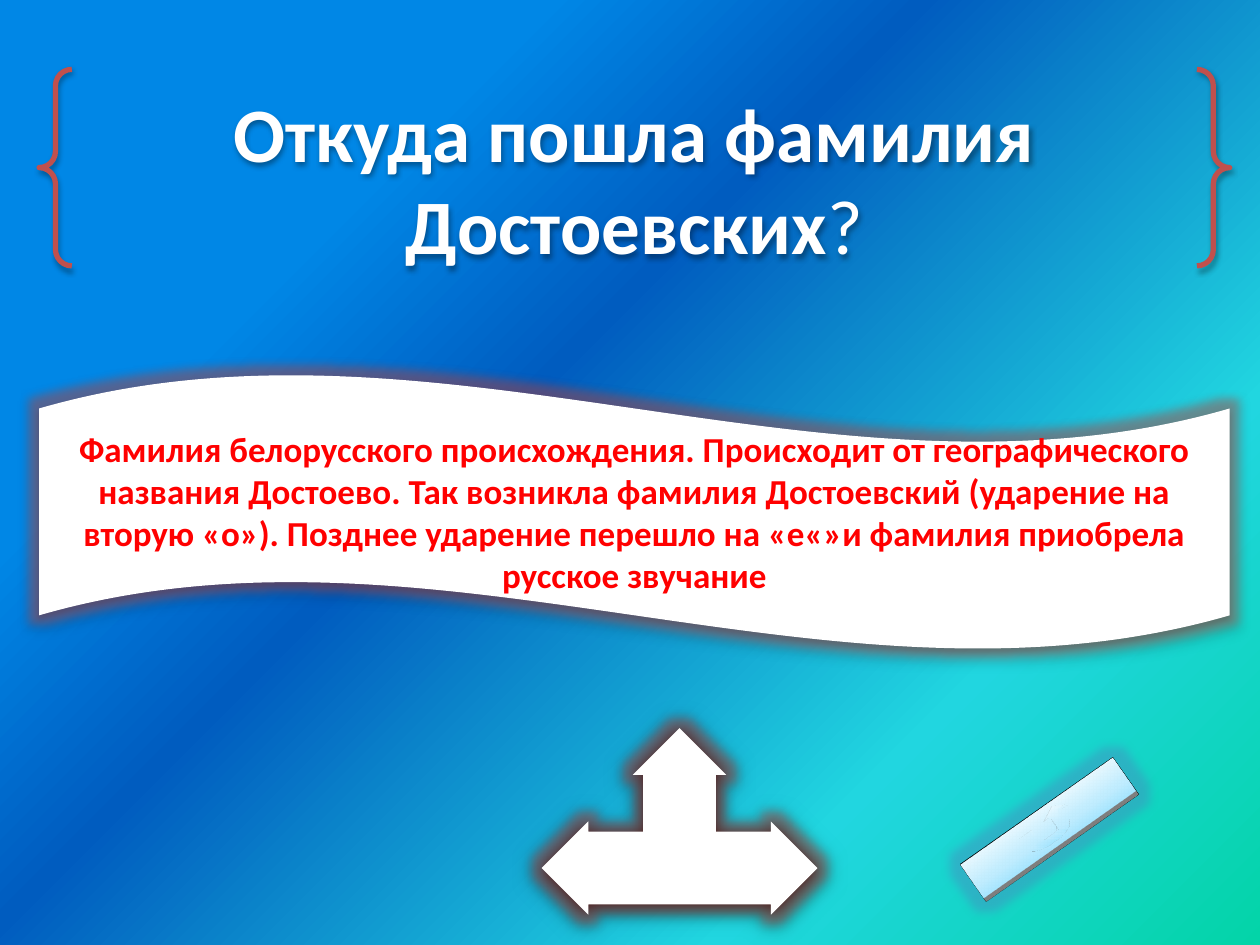
"""Builds a slide about the origin of the Dostoevsky surname."""
from lxml import etree
from pptx import Presentation
from pptx.dml.color import RGBColor
from pptx.enum.shapes import MSO_SHAPE
from pptx.enum.text import MSO_ANCHOR, MSO_AUTO_SIZE, PP_ALIGN
from pptx.oxml.ns import qn
from pptx.util import Cm, Pt

BRACES = MSO_SHAPE.DOUBLE_BRACE
WAVE = MSO_SHAPE.WAVE
ARROW = MSO_SHAPE.LEFT_RIGHT_UP_ARROW
BUTTON = MSO_SHAPE.ACTION_BUTTON_RETURN
MIDDLE = MSO_ANCHOR.MIDDLE
CENTER = PP_ALIGN.CENTER
NO_FIT = MSO_AUTO_SIZE.NONE

WHITE = RGBColor(0xFF, 0xFF, 0xFF)
BLACK = RGBColor(0x00, 0x00, 0x00)
RED = RGBColor(0xFF, 0x00, 0x00)
BRICK = RGBColor(0xC0, 0x50, 0x4D)
GLOW_RED = RGBColor(0xCC, 0x48, 0x42)
GLOW_BLUE = RGBColor(0x4F, 0x81, 0xBD)
SKY = [(0, RGBColor(0xA7, 0xE6, 0xFF), 100),
       (35, RGBColor(0xC1, 0xED, 0xFF), 100),
       (100, RGBColor(0xE7, 0xF8, 0xFF), 100)]
SEA = [(0, RGBColor(0x03, 0xD4, 0xA8), 100),
       (25, RGBColor(0x21, 0xD6, 0xE0), 100),
       (58, RGBColor(0x00, 0x5C, 0xBF), 59),
       (75, RGBColor(0x00, 0x87, 0xE6), 100)]


def add(parent, tag, **attrs):
    return etree.SubElement(parent, qn(tag), {k: str(v) for k, v in attrs.items()})


def add_color(parent, color, alpha):
    clr = add(parent, "a:srgbClr", val=color)
    if alpha < 100:
        add(clr, "a:alpha", val=alpha * 1000)


class Deck:
    """Holds the font and the current slide."""

    font = "Calibri"

    def __init__(self, prs):
        self.s = prs.slides.add_slide(prs.slide_layouts[5])

    def stops(self, grad, stops):
        for child in list(grad):
            grad.remove(child)
        gs_lst = add(grad, "a:gsLst")
        for pos, color, alpha in stops:
            add_color(add(gs_lst, "a:gs", pos=pos * 1000), color, alpha)

    def background(self, stops):
        self.s.background.fill.gradient()
        grad = self.s.element.find(".//" + qn("a:gradFill"))
        self.stops(grad, stops)
        path = add(grad, "a:path", path="circle")
        add(path, "a:fillToRect", l=100000, t=100000)
        add(grad, "a:tileRect", r=-100000, b=-100000)

    def text(self, sp, size, color, *runs):
        tf = sp.text_frame
        tf.word_wrap = True
        tf.auto_size = NO_FIT
        tf.vertical_anchor = MIDDLE
        p = tf.paragraphs[0]
        p.alignment = CENTER
        for text, bold in runs:
            r = p.add_run()
            r.text = text
            r.font.name = self.font
            r.font.size = Pt(size)
            r.font.bold = bold
            r.font.color.rgb = color

    def effects(self, sp, shadow, glow=None):
        sp.shadow.inherit = False
        lst = sp.element.spPr.find(qn("a:effectLst"))
        if glow:
            add_color(add(lst, "a:glow", rad=Pt(11)), glow, 40)
        alpha, blur, dist, angle = shadow
        shdw = add(lst, "a:outerShdw", blurRad=Pt(blur), dist=Pt(dist),
                   dir=angle * 60000, rotWithShape=0)
        add_color(shdw, BLACK, alpha)

    def title(self, box, shadow, *runs):
        sp = self.s.shapes.title
        sp.left, sp.top, sp.width, sp.height = map(Cm, box)
        self.text(sp, 44, WHITE, *runs)
        self.effects(sp, shadow)

    def shape(self, kind, box, fill=None, line=None, weight=0):
        sp = self.s.shapes.add_shape(kind, *map(Cm, box))
        if fill:
            sp.fill.solid()
            sp.fill.fore_color.rgb = fill
        else:
            sp.fill.background()
        if line:
            sp.line.color.rgb = line
            sp.line.width = Pt(weight)
        else:
            sp.line.fill.background()
        return sp

    def gradient(self, sp, stops, angle):
        sp.fill.gradient()
        grad = sp.element.spPr.find(qn("a:gradFill"))
        self.stops(grad, stops)
        add(grad, "a:lin", ang=angle * 60000, scaled=0)

    def tilt(self, sp, lat, rev, depth):
        scene = add(sp.element.spPr, "a:scene3d")
        camera = add(scene, "a:camera", prst="orthographicFront")
        add(camera, "a:rot", lat=lat * 60000, lon=0, rev=rev * 60000)
        add(scene, "a:lightRig", rig="threePt", dir="t")
        add(sp.element.spPr, "a:sp3d", extrusionH=Pt(depth))


def main():
    prs = Presentation()
    prs.slide_width, prs.slide_height = Cm(25.4), Cm(19.05)
    d = Deck(prs)
    d.background(SEA)

    soft = (35, 3.1, 1.8, 90)
    d.title((0.79, 1.6, 24, 3.96), soft,
            ("Откуда пошла фамилия Достоевских", True), ("?", False))
    braces = d.shape(BRACES, (0.79, 1.4, 24, 3.96), line=BRICK, weight=3)
    d.effects(braces, soft)

    wave = d.shape(WAVE, (0.79, 7.54, 24, 5.56), WHITE)
    d.text(wave, 20, RED, (
        "Фамилия белорусского происхождения. Происходит от географического "
        "названия Достоево. Так возникла фамилия Достоевский (ударение на "
        "вторую «о»). Позднее ударение перешло на «е«»и фамилия приобрела "
        "русское звучание", True))
    d.effects(wave, (32, 3.5, 2.2, 90), GLOW_RED)

    arrow = d.shape(ARROW, (10.92, 14.68, 5.56, 3.76), WHITE)
    arrow.adjustments[0] = 0.39
    d.effects(arrow, (100, 8.5, 1, 90), GLOW_RED)

    button = d.shape(BUTTON, (19.25, 15.88, 3.76, 1.6), line=WHITE, weight=2.75)
    d.gradient(button, SKY, 270)
    d.effects(button, (43, 25, 0, 45), GLOW_BLUE)
    d.tilt(button, 301, 35, 3)

    prs.save("out.pptx")


if __name__ == "__main__":
    main()
